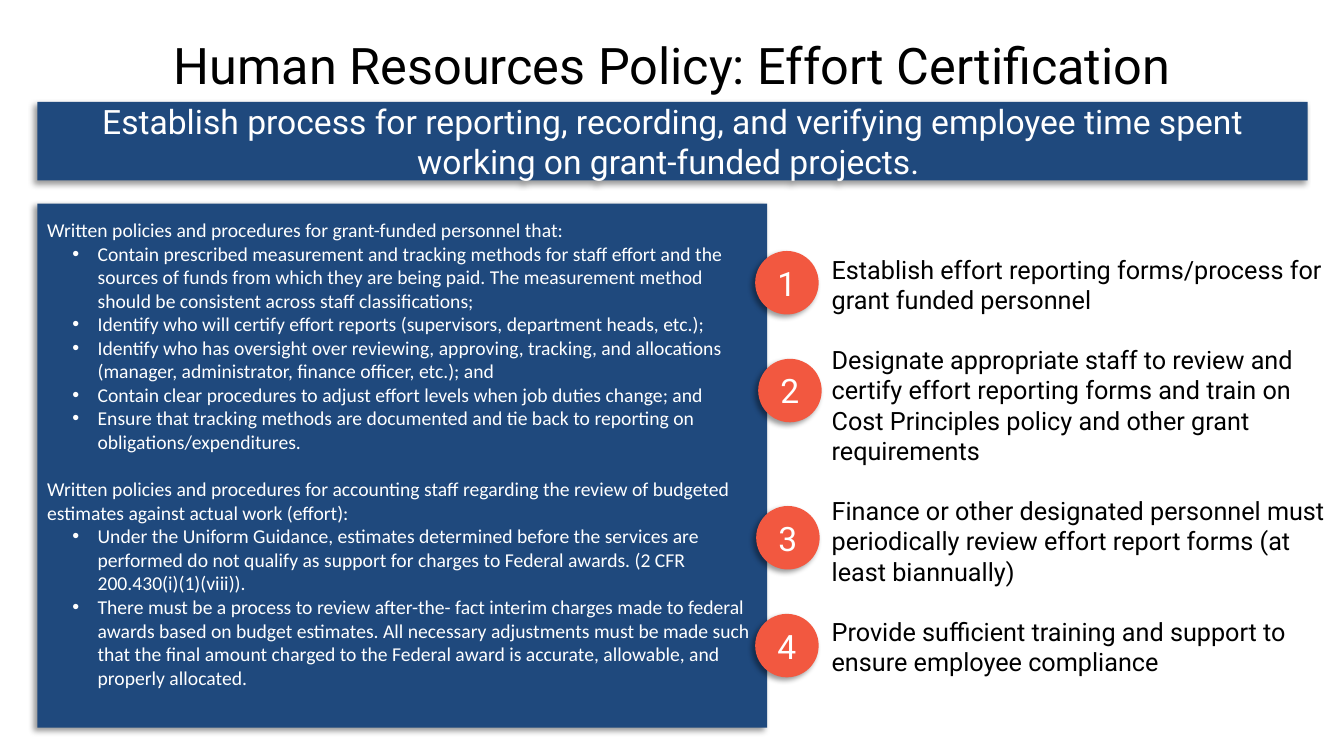
"""Build the effort certification policy slide."""
from lxml import etree
from pptx import Presentation
from pptx.dml.color import RGBColor
from pptx.enum.shapes import MSO_SHAPE as Shape
from pptx.enum.text import MSO_ANCHOR as Anchor, MSO_AUTO_SIZE as Fit, PP_ALIGN as Align
from pptx.oxml.ns import qn
from pptx.util import Inches, Pt

NAVY = RGBColor(0x1F, 0x49, 0x7D)
CORAL = RGBColor(0xF2, 0x58, 0x40)
WHITE = RGBColor(0xFF, 0xFF, 0xFF)
BLACK = RGBColor(0, 0, 0)

TITLE = "Human Resources Policy: Effort Certification"
GOAL = ("Establish process for reporting, recording, and verifying employee time spent "
        "working on grant-funded projects. ")
RULES = [
    ("Written policies and procedures for grant-funded personnel that:", [
        "Contain prescribed measurement and tracking methods for staff effort and the sources "
        "of funds from which they are being paid. The measurement method should be consistent "
        "across staff classifications;",
        "Identify who will certify effort reports (supervisors, department heads, etc.);",
        "Identify who has oversight over reviewing, approving, tracking, and allocations "
        "(manager, administrator, finance officer, etc.); and",
        "Contain clear procedures to adjust effort levels when job duties change; and",
        "Ensure that tracking methods are documented and tie back to reporting on "
        "obligations/expenditures.",
    ]),
    ("Written policies and procedures for accounting staff regarding the review of budgeted "
     "estimates against actual work (effort):", [
         "Under the Uniform Guidance, estimates determined before the services are performed "
         "do not qualify as support for charges to Federal awards. (2 CFR 200.430(i)(1)(viii)).",
         "There must be a process to review after-the- fact interim charges made to federal "
         "awards based on budget estimates. All necessary adjustments must be made such that "
         "the final amount charged to the Federal award is accurate, allowable, and properly "
         "allocated.",
     ]),
]
STEPS = [
    (7.49, 2.49, "Establish effort reporting forms/process for grant funded personnel"),
    (7.52, 3.56, "Designate appropriate staff to review and certify effort reporting forms "
                 "and train on Cost Principles policy and other grant requirements"),
    (7.5, 5.02, "Finance or other designated personnel must periodically review effort report "
                "forms (at least biannually)"),
    (7.49, 6.09, "Provide sufficient training and support to ensure employee compliance"),
]

HEAD = {"name": "Roboto", "size": Pt(36), "color": BLACK}
LEAD = {"name": "Roboto", "size": Pt(24), "color": WHITE}
BODY = {"name": "Calibri", "size": Pt(14), "color": WHITE}
STEP = {"name": "Roboto", "size": Pt(18), "color": BLACK}


def write(frame, text, look, align=Align.LEFT, gap=0, bullet=False):
    """Add one formatted paragraph, filling the empty first one."""
    para = frame.paragraphs[0]
    if para.runs:
        para = frame.add_paragraph()
    para.alignment = align
    if gap:
        para.space_before = Pt(gap)
    if bullet:
        para.level = 1
        props = para._p.get_or_add_pPr()
        props.set("marL", str(Inches(0.5)))
        props.set("indent", str(Inches(-0.25)))
        etree.SubElement(props, qn("a:buFont"), typeface="Arial")
        etree.SubElement(props, qn("a:buChar"), char="•")
    run = para.add_run()
    run.text = text
    for key, value in look.items():
        if key == "color":
            run.font.color.rgb = value
        else:
            setattr(run.font, key, value)


def panel(slide, kind, box, fill):
    """Add a filled shape with a soft shadow and return its text frame."""
    shape = slide.shapes.add_shape(kind, *map(Inches, box))
    shape.shadow.inherit = False
    shape.fill.solid()
    shape.fill.fore_color.rgb = fill
    shape.line.fill.background()
    effects = shape._element.spPr.find(qn("a:effectLst"))
    shade = etree.SubElement(effects, qn("a:outerShdw"), blurRad=str(Pt(4)), dist=str(Pt(3)),
                             dir="8100000", algn="tr", rotWithShape="0")
    tint = etree.SubElement(shade, qn("a:srgbClr"), val=str(BLACK))
    etree.SubElement(tint, qn("a:alpha"), val="40000")
    frame = shape.text_frame
    frame.word_wrap = True
    frame.vertical_anchor = Anchor.MIDDLE
    return frame


def main():
    """Lay out the slide and save it."""
    deck = Presentation()
    deck.slide_width, deck.slide_height = Inches(13.33), Inches(7.5)
    slide = deck.slides.add_slide(deck.slide_layouts[5])

    title = slide.shapes.title
    title.left, title.top, title.width, title.height = map(Inches, (0.67, 0.25, 12, 0.78))
    frame = title.text_frame
    pads = {"margin_left": 0, "margin_right": 0, "margin_top": Inches(0.07),
            "margin_bottom": Inches(0.07), "vertical_anchor": Anchor.MIDDLE,
            "auto_size": Fit.NONE, "word_wrap": True}
    for key, value in pads.items():
        setattr(frame, key, value)
    write(frame, TITLE, HEAD, Align.CENTER)

    goal = panel(slide, Shape.RECTANGLE, (0.37, 1.01, 12.6, 0.78), NAVY)
    write(goal, GOAL, LEAD, Align.CENTER)

    rules = panel(slide, Shape.RECTANGLE, (0.37, 2.02, 7.24, 5.2), NAVY)
    rules.margin_bottom = Inches(0.29)
    for num, (intro, points) in enumerate(RULES):
        write(rules, intro, BODY, gap=17 if num else 0)
        for point in points:
            write(rules, point, BODY, bullet=True)

    steps = slide.shapes.add_textbox(*map(Inches, (8.15, 2.47, 5.18, 4.75))).text_frame
    steps.word_wrap = True
    for num, (left, top, text) in enumerate(STEPS, 1):
        write(steps, text, STEP, gap=21.5 if num > 1 else 0)
        disc = panel(slide, Shape.OVAL, (left, top, 0.63, 0.63), CORAL)
        write(disc, str(num), LEAD, Align.CENTER)

    deck.save("out.pptx")


if __name__ == "__main__":
    main()
